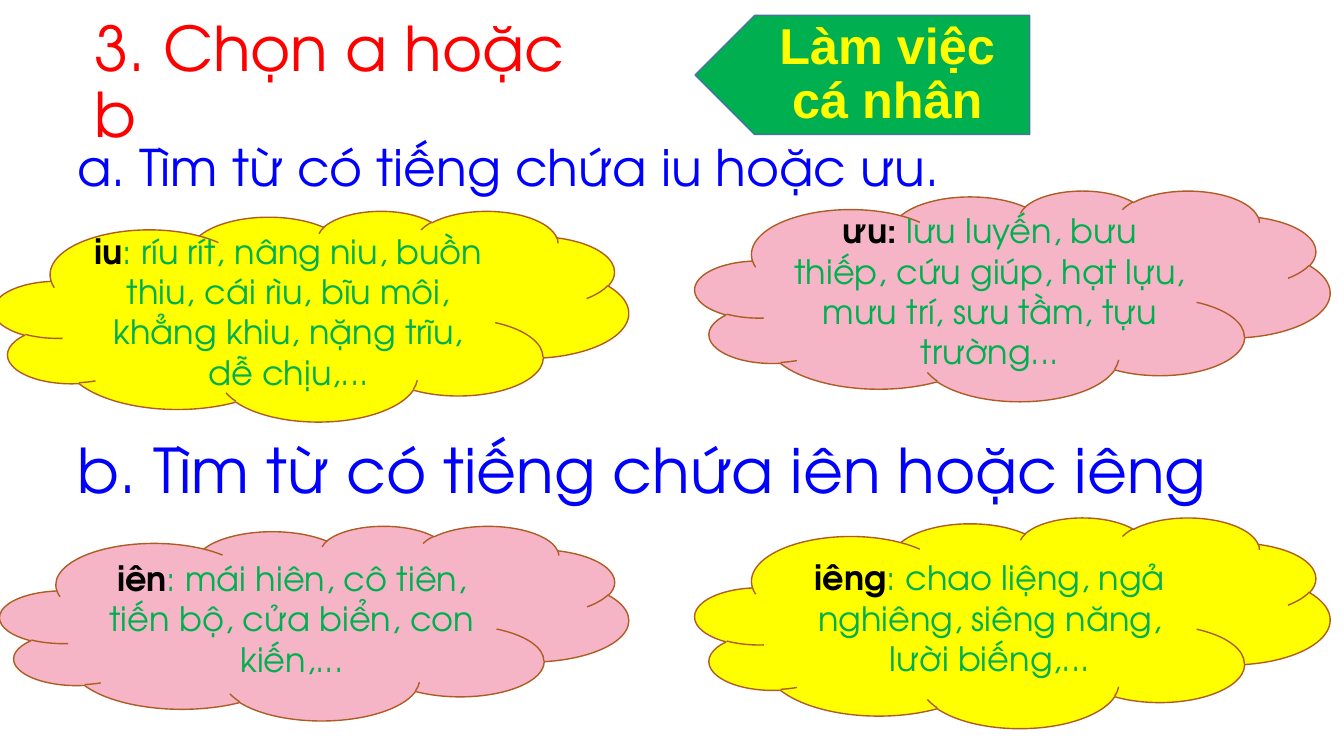
from dataclasses import dataclass

from pptx import Presentation
from pptx.dml.color import RGBColor
from pptx.enum.shapes import MSO_SHAPE
from pptx.enum.text import MSO_ANCHOR, MSO_AUTO_SIZE, PP_ALIGN
from pptx.util import Pt

LEFT, CENTER = PP_ALIGN.LEFT, PP_ALIGN.CENTER
MIDDLE = MSO_ANCHOR.MIDDLE
FIXED_SIZE = MSO_AUTO_SIZE.NONE
CLOUD, PENTAGON = MSO_SHAPE.CLOUD, MSO_SHAPE.PENTAGON
TITLE_ONLY = 5


@dataclass(frozen=True)
class Theme:
    lesson_font: str = "TeX Gyre Adventor"
    badge_font: str = "Arial"
    heading_size: int = 44
    medium_size: int = 36
    word_size: int = 24
    red: str = "FF0000"
    blue: str = "0000FF"
    black: str = "000000"
    green: str = "00B050"
    yellow: str = "FFFF00"
    pink: str = "F5B5C7"
    cloud_line: str = "AF5C24"
    badge_line: str = "43739E"


THEME = Theme()


def add_span(para, text, *, size, color, font=THEME.lesson_font, bold=False):
    span = para.add_run()
    span.text = text
    span.font.name = font
    span.font.size = Pt(size)
    span.font.bold = bold
    span.font.color.rgb = RGBColor.from_string(color)


def prepare_text(shape, *, align=LEFT, line_spacing=0.9):
    """Set up wrapped, vertically centred text and return its paragraph."""
    frame = shape.text_frame
    frame.word_wrap = True
    frame.auto_size = FIXED_SIZE
    frame.vertical_anchor = MIDDLE
    para = frame.paragraphs[0]
    para.alignment = align
    para.line_spacing = line_spacing
    return para


def add_panel(page, kind, box, fill, line):
    shape = page.shapes.add_shape(kind, *map(Pt, box))
    shape.shadow.inherit = False
    shape.fill.solid()
    shape.fill.fore_color.rgb = RGBColor.from_string(fill)
    shape.line.color.rgb = RGBColor.from_string(line)
    shape.line.width = Pt(1)
    return shape


def place_title(page, box, text):
    title = page.shapes.title
    title.left, title.top, title.width, title.height = map(Pt, box)
    add_span(prepare_text(title), text, size=THEME.heading_size, color=THEME.red)


def add_label(page, box, text, *, align=LEFT, **style):
    label = page.shapes.add_textbox(*map(Pt, box))
    add_span(prepare_text(label, align=align), text, **style)


def add_badge(page, box, text):
    """Draw the left-pointing badge with its caption beside the tip."""
    left, top, width, height = box
    arrow = add_panel(page, PENTAGON, box, THEME.green, THEME.badge_line)
    arrow.rotation = 180
    tip, margin = 35.5, 14
    caption_box = (left + tip, top + margin, width - tip, height - 2 * margin)
    add_label(page, caption_box, text, align=CENTER, size=THEME.medium_size,
              color=THEME.yellow, font=THEME.badge_font, bold=True)


def add_word_cloud(page, box, fill, rhyme, words):
    cloud = add_panel(page, CLOUD, box, fill, THEME.cloud_line)
    para = prepare_text(cloud, align=CENTER, line_spacing=1.0)
    add_span(para, rhyme, size=THEME.word_size, color=THEME.black, bold=True)
    add_span(para, words, size=THEME.word_size, color=THEME.green)


def build_exercise(page):
    place_title(page, (60.5, 25, 355, 70.5), "3. Chọn a hoặc b")
    add_label(page, (48, 93, 828, 57.5), "a. Tìm từ có tiếng chứa iu hoặc ưu.",
              size=THEME.medium_size, color=THEME.blue)
    add_label(page, (48, 301, 828, 74.5), "b. Tìm từ có tiếng chứa iên hoặc iêng",
              size=THEME.heading_size, color=THEME.blue)

    clouds = (
        ((-4.5, 150.5, 453.5, 150.5), THEME.yellow, "iu",
         ": ríu rít, nâng niu, buồn thiu, cái rìu, bĩu môi, khẳng khiu, "
         "nặng trĩu, dễ chịu,..."),
        ((0, 375.5, 449, 139), THEME.pink, "iên",
         ": mái hiên, cô tiên, tiến bộ, cửa biển, con kiến,..."),
        ((496.5, 136, 453.5, 150.5), THEME.pink, "ưu: ",
         "lưu luyến, bưu thiếp, cứu giúp, hạt lựu, mưu trí, sưu tầm, "
         "tựu trường..."),
        ((496.5, 369.5, 453.5, 150.5), THEME.yellow, "iêng",
         ": chao liệng, ngả nghiêng, siêng năng, lười biếng,..."),
    )
    for box, fill, rhyme, words in clouds:
        add_word_cloud(page, box, fill, rhyme, words)
    add_badge(page, (496.5, 11, 239, 85), "Làm việc cá nhân")


def main():
    deck = Presentation()
    deck.slide_width, deck.slide_height = Pt(960), Pt(540)
    build_exercise(deck.slides.add_slide(deck.slide_layouts[TITLE_ONLY]))
    deck.save("out.pptx")


if __name__ == "__main__":
    main()
